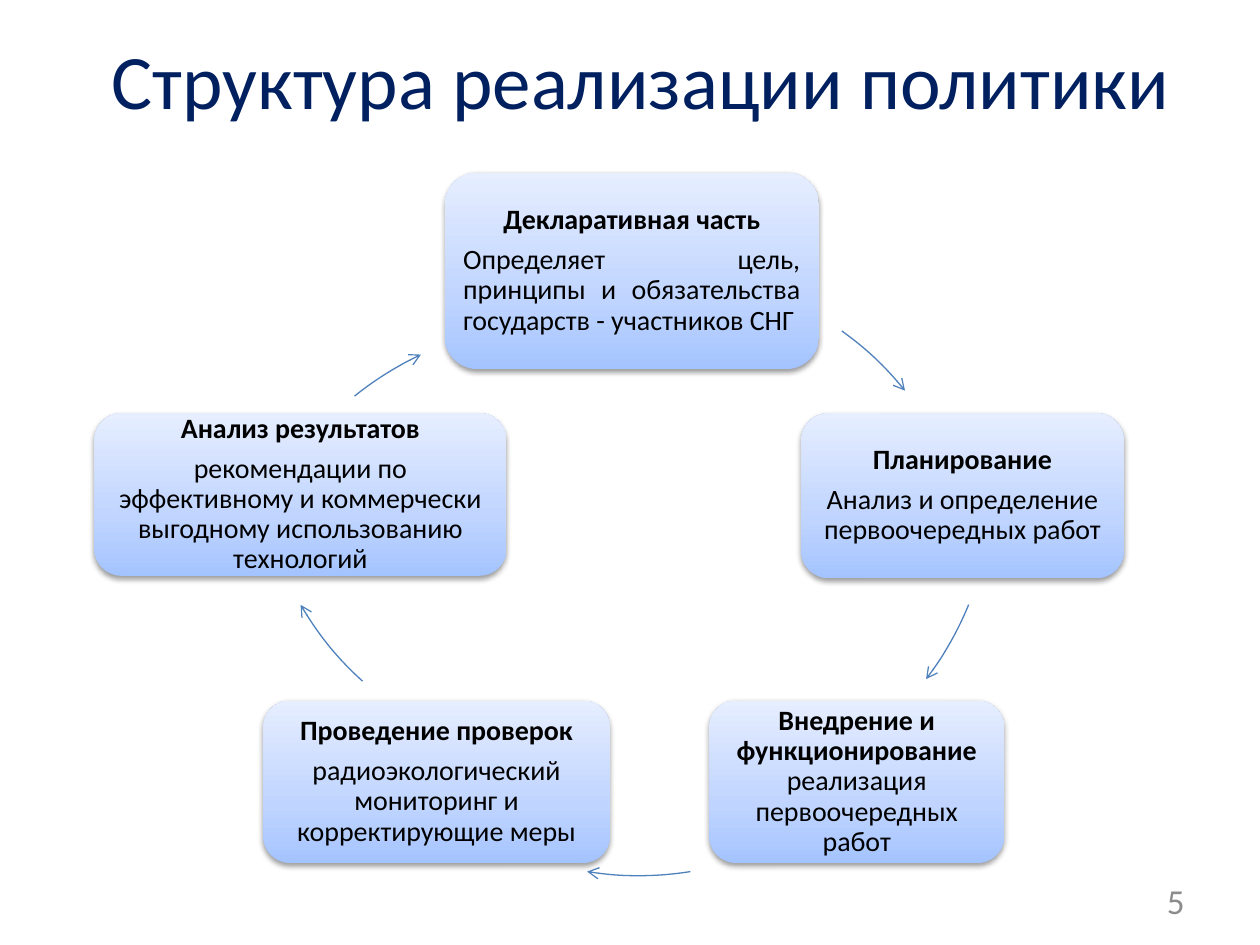
"""Build a slide showing the policy cycle as five boxes joined by arcs."""
import pptx
import pptx.dml.color
import pptx.enum.shapes
import pptx.enum.text
import pptx.oxml
import pptx.oxml.ns
import pptx.util

ALIGN = pptx.enum.text.PP_ALIGN
SHAPE = pptx.enum.shapes.MSO_SHAPE
FONT = "Calibri"
DIAMETER = 5.18
NS = pptx.oxml.ns.nsdecls("a")

TITLE = "Структура реализации политики"
NUMBER = "5"
STEPS = [
    ((3.53, 1.37, 2.97, 1.56), "Декларативная часть",
     "Определяет цель, принципы и обязательства государств - участников СНГ", ALIGN.JUSTIFY),
    ((6.36, 3.28, 2.56, 1.31), "Планирование",
     "Анализ и определение первоочередных работ", ALIGN.CENTER),
    ((5.63, 5.56, 2.34, 1.29), "Внедрение и функционирование ",
     "реализация первоочередных работ", None),
    ((2.09, 5.56, 2.75, 1.29), "Проведение проверок",
     "радиоэкологический мониторинг и корректирующие меры", ALIGN.CENTER),
    ((0.75, 3.28, 3.27, 1.29), "Анализ результатов",
     "рекомендации по эффективному и коммерчески выгодному использованию технологий",
     ALIGN.CENTER),
]
ARCS = [
    (2.58, 2.14, 305.7, 321),
    (2.7, 1.23, 22.2, 37.3),
    (2.48, 1.77, 80.9, 99.1),
    (2.03, 0.9, 132.3, 149.6),
    (1.85, 2.57, 231.1, 244.9),
]
STOPS = [(0, "A4C4FF"), (35, "BFD4FF"), (100, "E6EEFF")]


def color(value):
    return pptx.dml.color.RGBColor.from_string(value)


def inches(values):
    return [pptx.util.Inches(v) for v in values]


def style(r, size, value, bold=False):
    r.font.name, r.font.size, r.font.bold = FONT, pptx.util.Pt(size), bold
    r.font.color.rgb = color(value)


def add_label(s, box, text, size, value, align):
    tf = s.shapes.add_textbox(*inches(box)).text_frame
    tf.word_wrap = True
    tf.vertical_anchor = pptx.enum.text.MSO_ANCHOR.MIDDLE
    tf.text = text
    p = tf.paragraphs[0]
    p.alignment = align
    style(p.runs[0], size, value)


def add_gradient_and_shadow(sp):
    stops = "".join(f'<a:gs pos="{pos * 1000}"><a:srgbClr val="{c}"/></a:gs>' for pos, c in STOPS)
    gradient = (f'<a:gradFill {NS} rotWithShape="1"><a:gsLst>{stops}</a:gsLst>'
                '<a:lin ang="16200000" scaled="0"/></a:gradFill>')
    shadow = (f'<a:effectLst {NS}><a:outerShdw blurRad="40000" dist="20000" dir="5400000" '
              'rotWithShape="0"><a:srgbClr val="000000"><a:alpha val="38000"/></a:srgbClr>'
              '</a:outerShdw></a:effectLst>')
    sp.line.fill.background()
    spPr = sp.element.spPr
    spPr.find(pptx.oxml.ns.qn("a:ln")).addprevious(pptx.oxml.parse_xml(gradient))
    spPr.append(pptx.oxml.parse_xml(shadow))


def add_step(s, box, heading, body, align):
    sp = s.shapes.add_shape(SHAPE.ROUNDED_RECTANGLE, *inches(box))
    add_gradient_and_shadow(sp)
    tf = sp.text_frame
    tf.word_wrap = True
    tf.vertical_anchor = pptx.enum.text.MSO_ANCHOR.MIDDLE
    tf.margin_left = tf.margin_right = pptx.util.Inches(0.07)
    tf.margin_top = tf.margin_bottom = pptx.util.Inches(0.07)
    tf.text = heading
    p = tf.paragraphs[0]
    p.alignment = ALIGN.CENTER
    style(p.runs[0], 16, "000000", True)
    if align is not None:
        p = tf.add_paragraph()
        p.alignment = align
    r = p.add_run()
    r.text = body
    style(r, 16, "000000")
    for p in tf.paragraphs:
        p.line_spacing = 0.9
        p.space_after = pptx.util.Pt(5.6)


def add_arc(s, left, top, start, end):
    sp = s.shapes.add_shape(SHAPE.ARC, *inches((left, top, DIAMETER, DIAMETER)))
    sp.shadow.inherit = False
    sp.fill.background()
    sp.line.color.rgb = color("4F81BD")
    sp.line.width = pptx.util.Pt(0.75)
    for i, angle in enumerate((start, end)):
        sp.adjustments[i] = angle * 60000 / 100000
    ln = sp.element.spPr.find(pptx.oxml.ns.qn("a:ln"))
    ln.append(pptx.oxml.parse_xml(f'<a:tailEnd {NS} type="arrow"/>'))


def main():
    prs = pptx.Presentation()
    prs.slide_width, prs.slide_height = inches((10, 7.5))
    s = prs.slides.add_slide(prs.slide_layouts[6])
    add_label(s, (0.59, 0, 9, 1.25), TITLE, 44, "002060", ALIGN.CENTER)
    for step, arc in zip(STEPS, ARCS):
        add_step(s, *step)
        add_arc(s, *arc)
    add_label(s, (7.17, 6.95, 2.33, 0.4), NUMBER, 20, "8C8C8C", ALIGN.RIGHT)
    prs.save("out.pptx")


if __name__ == "__main__":
    main()
